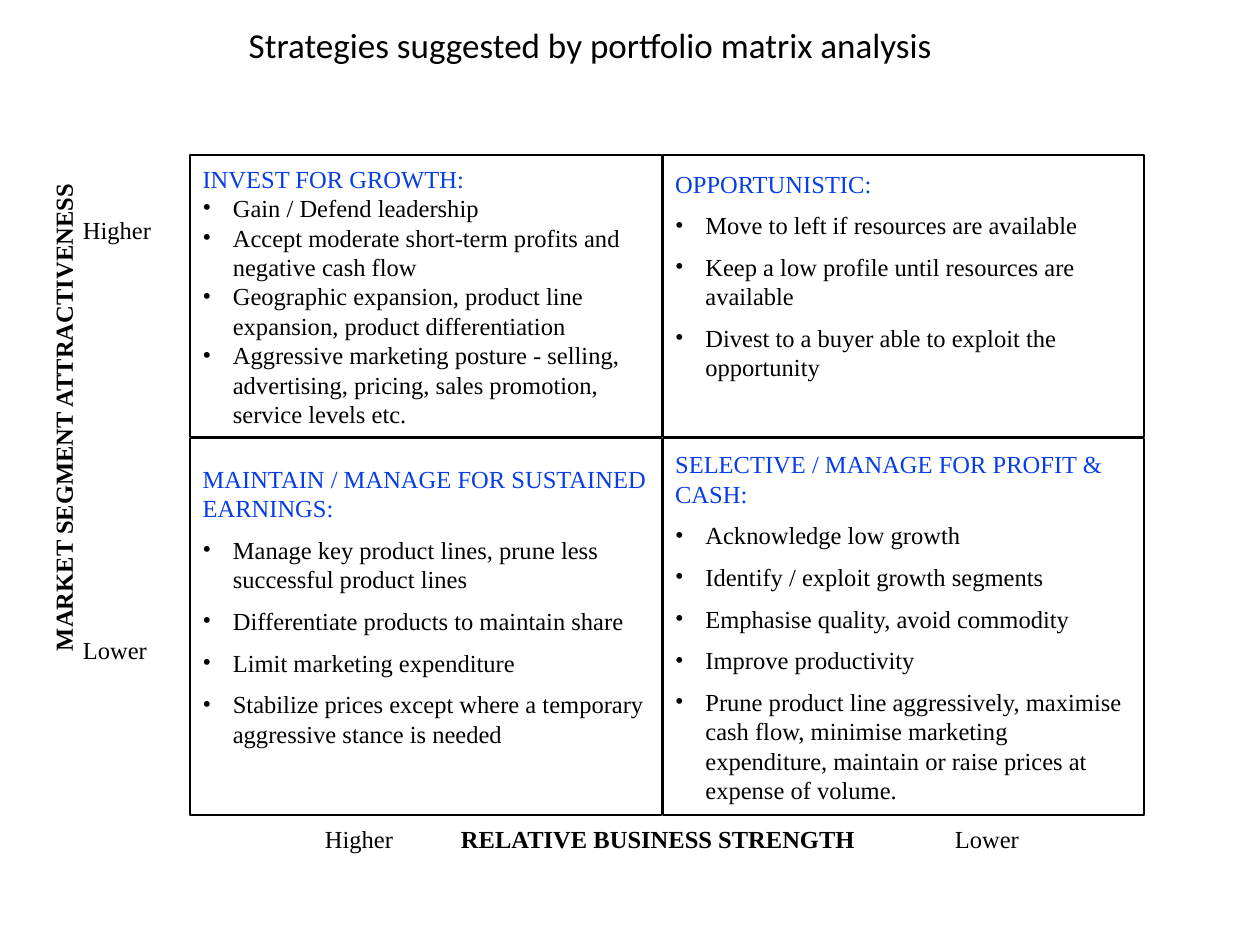
from lxml import etree
from pptx import Presentation
from pptx.dml.color import RGBColor
from pptx.enum.shapes import MSO_SHAPE
from pptx.enum.text import MSO_ANCHOR, MSO_AUTO_SIZE, PP_ALIGN
from pptx.oxml.ns import qn
from pptx.util import Inches, Pt

RECT = MSO_SHAPE.RECTANGLE
MIDDLE = MSO_ANCHOR.MIDDLE
FIT = MSO_AUTO_SIZE.SHAPE_TO_FIT_TEXT
LEFT, CENTER = PP_ALIGN.LEFT, PP_ALIGN.CENTER

BLACK, BLUE = "000000", "063DE8"
SERIF, SANS = "Times New Roman", "Calibri"

# Matrix columns (left, width) and rows (top, height)
COLS = [(1.51, 3.74), (5.26, 3.82)]
ROWS = [(1.23, 2.24), (3.48, 2.99)]

# Column, row, space before bullets, bottom inset, heading, bullets
CELLS = [
    (0, 0, 0, 0.05, "INVEST FOR GROWTH:", [
        "Gain / Defend leadership",
        "Accept moderate short-term profits and negative cash flow",
        "Geographic expansion, product line expansion, product differentiation",
        "Aggressive marketing posture - selling, advertising, pricing, "
        "sales promotion, service levels etc.",
    ]),
    (0, 1, 7, 0.38, "MAINTAIN / MANAGE FOR SUSTAINED EARNINGS:", [
        "Manage key product lines, prune less successful product lines",
        "Differentiate products to maintain share",
        "Limit marketing expenditure",
        "Stabilize prices except where a temporary aggressive stance is needed",
    ]),
    (1, 0, 7, 0.38, "OPPORTUNISTIC:", [
        "Move to left if resources are available",
        "Keep a low profile until resources are available",
        "Divest to a buyer able to exploit the opportunity",
    ]),
    (1, 1, 7, 0.05, "SELECTIVE / MANAGE FOR PROFIT & CASH:", [
        "Acknowledge low growth",
        "Identify / exploit growth segments",
        "Emphasise quality, avoid commodity",
        "Improve productivity",
        "Prune product line aggressively, maximise cash flow, minimise "
        "marketing expenditure, maintain or raise prices at expense of volume.",
    ]),
]

# Text, left, top, width, bold, rotation
LABELS = [
    ("MARKET SEGMENT ATTRACTIVENESS", -1.47, 3.13, 3.94, True, 270),
    ("RELATIVE BUSINESS STRENGTH", 3.56, 6.49, 3.35, True, 0),
    ("Higher", 0.56, 1.66, 0.75, False, 0),
    ("Lower", 0.56, 4.99, 0.71, False, 0),
    ("Higher", 2.48, 6.49, 0.75, False, 0),
    ("Lower", 7.48, 6.49, 0.71, False, 0),
]


def color(code):
    return RGBColor.from_string(code)


def write(para, text, size=14, font=SERIF, fill=BLACK, bold=False,
          align=LEFT, before=0):
    para.alignment = align
    para.space_before = Pt(before)
    run = para.add_run()
    run.text = text
    run.font.size = Pt(size)
    run.font.name = font
    run.font.bold = bold
    run.font.color.rgb = color(fill)


def bullet(para):
    props = para._p.get_or_add_pPr()
    props.set("marL", str(Inches(0.24)))
    props.set("indent", str(-Inches(0.24)))
    etree.SubElement(props, qn("a:buFont")).set("typeface", SERIF)
    etree.SubElement(props, qn("a:buChar")).set("char", "•")


def add_title(slide, text):
    box = slide.shapes.add_textbox(
        Inches(0.35), Inches(-0.27), Inches(8.67), Inches(1.25))
    frame = box.text_frame
    frame.word_wrap = True
    frame.vertical_anchor = MIDDLE
    write(frame.paragraphs[0], text, size=20, font=SANS, align=CENTER)


def add_label(slide, text, left, top, width, bold, turn):
    box = slide.shapes.add_textbox(
        Inches(left), Inches(top), Inches(width), Inches(0.33))
    box.rotation = turn
    frame = box.text_frame
    frame.word_wrap = False
    frame.auto_size = FIT
    write(frame.paragraphs[0], text, bold=bold)


def add_cell(slide, col, row, before, inset, head, items):
    left, width = COLS[col]
    top, height = ROWS[row]
    cell = slide.shapes.add_shape(
        RECT, Inches(left), Inches(top), Inches(width), Inches(height))
    cell.shadow.inherit = False
    cell.fill.background()
    cell.line.color.rgb = color(BLACK)
    cell.line.width = Pt(1)
    frame = cell.text_frame
    frame.word_wrap = True
    frame.vertical_anchor = MIDDLE
    frame.margin_bottom = Inches(inset)
    write(frame.paragraphs[0], head, fill=BLUE)
    for item in items:
        para = frame.add_paragraph()
        write(para, item, before=before)
        bullet(para)


def main():
    deck = Presentation()
    deck.slide_width, deck.slide_height = Inches(10), Inches(7.5)
    slide = deck.slides.add_slide(deck.slide_layouts[6])

    add_title(slide, "Strategies suggested by portfolio matrix analysis")
    # Axis names and their ends
    for label in LABELS:
        add_label(slide, *label)
    # Strategy matrix
    for cell in CELLS:
        add_cell(slide, *cell)

    deck.save("out.pptx")


if __name__ == "__main__":
    main()
